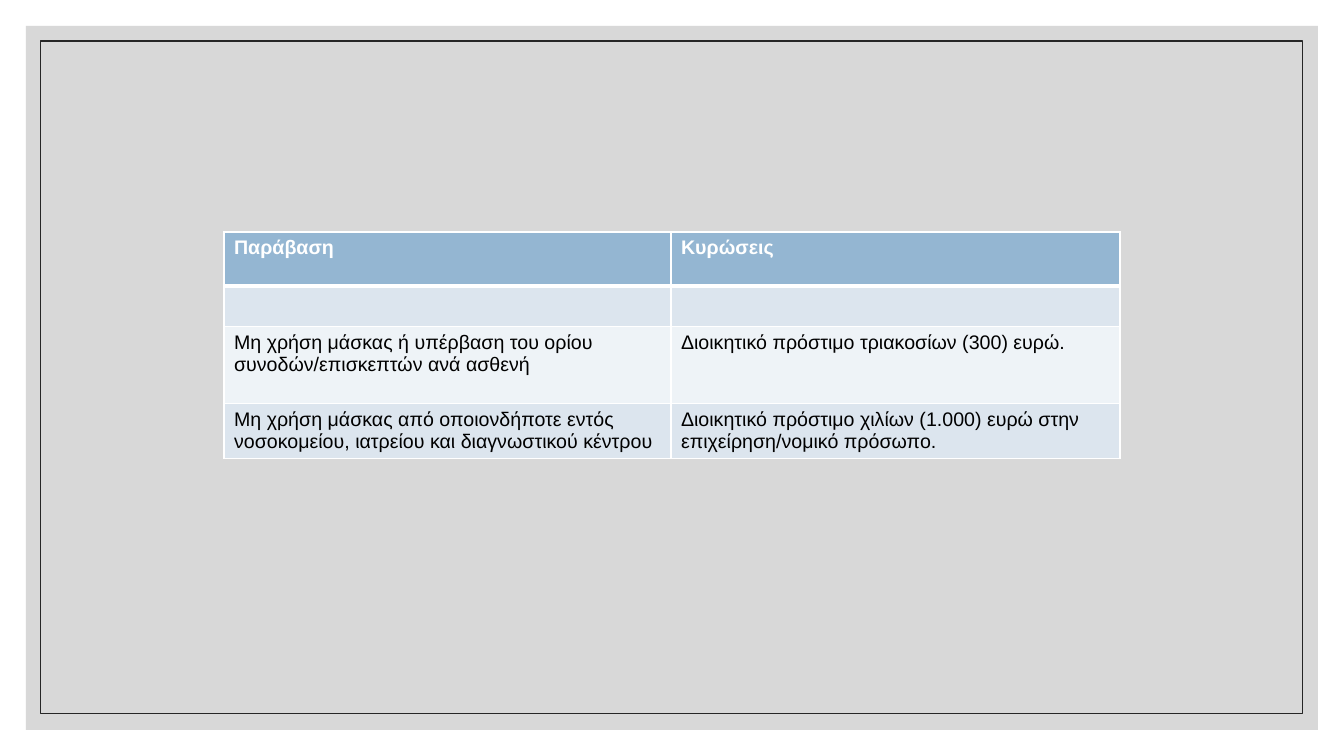
from dataclasses import dataclass

from lxml import etree
from pptx import Presentation
from pptx import util as u
from pptx.dml.color import RGBColor
from pptx.enum import shapes
from pptx.oxml import ns

SCALE = 914400 / 100.8
WHITE = "FFFFFF"
BLACK = "000000"
PALE = "DCE5EE"


@dataclass
class Frame:
    left: int
    top: int
    width: int
    height: int
    fill: str = ""
    alpha: int = 100
    line: str = ""


@dataclass
class Row:
    height: int
    fill: str
    texts: tuple[str, str]
    ink: str = BLACK
    bold: bool = False
    rule: int = 1


FRAMES = [
    Frame(26, 26, 1292, 704, fill="BFBFBF", alpha=60),
    Frame(41, 41, 1262, 673, line="262626"),
]
COLS = [447, 449]
ROWS = [
    Row(54, "94B6D2", ("Παράβαση", "Κυρώσεις"), WHITE, True, 3),
    Row(40, PALE, ("", "")),
    Row(77, "EEF3F7", (
        "Μη χρήση μάσκας ή υπέρβαση του ορίου συνοδών/επισκεπτών ανά ασθενή",
        "Διοικητικό πρόστιμο τριακοσίων (300) ευρώ.")),
    Row(55, PALE, (
        "Μη χρήση μάσκας από οποιονδήποτε εντός νοσοκομείου, ιατρείου "
        "και διαγνωστικού κέντρου",
        "Διοικητικό πρόστιμο χιλίων (1.000) ευρώ στην επιχείρηση/νομικό πρόσωπο.")),
]


def px(size: int) -> u.Emu:
    return u.Emu(round(size * SCALE))


def paint(fill, color: str) -> None:
    fill.solid()
    fill.fore_color.rgb = RGBColor.from_string(color)


def add_node(parent, tag: str, **attrs: str):
    return etree.SubElement(parent, ns.qn(tag), attrs)


def draw_frame(slide, frame: Frame) -> None:
    box = slide.shapes.add_shape(
        shapes.MSO_SHAPE.RECTANGLE, px(frame.left), px(frame.top),
        px(frame.width), px(frame.height))
    box.shadow.inherit = False
    if frame.fill:
        paint(box.fill, frame.fill)
        color = box.fill._xPr.find(".//" + ns.qn("a:srgbClr"))
        add_node(color, "a:alpha", val=str(frame.alpha * 1000))
    else:
        box.fill.background()
    if frame.line:
        paint(box.line.fill, frame.line)
        box.line.width = u.Pt(0.75)
    else:
        box.line.fill.background()


def set_edges(cell, above: int, below: int) -> None:
    """Draw white borders, with the top and bottom widths in points."""
    props = cell._tc.get_or_add_tcPr()
    for side, width in (("L", 1), ("R", 1), ("T", above), ("B", below)):
        edge = add_node(props, f"a:ln{side}", w=str(u.Pt(width)))
        add_node(add_node(edge, "a:solidFill"), "a:srgbClr", val=WHITE)


def fill_cell(cell, text: str, row: Row, above: int) -> None:
    set_edges(cell, above, row.rule)
    paint(cell.fill, row.fill)
    cell.text_frame.text = text
    for run in cell.text_frame.paragraphs[0].runs:
        run.font.name = "Arial"
        run.font.size = u.Pt(14)
        run.font.bold = row.bold
        run.font.color.rgb = RGBColor.from_string(row.ink)


def draw_table(slide, left: int, top: int) -> None:
    grid = slide.shapes.add_table(
        len(ROWS), len(COLS), px(left), px(top), px(sum(COLS)),
        px(sum(row.height for row in ROWS))).table
    for col, width in zip(grid.columns, COLS):
        col.width = px(width)
    above = 1
    for line, row in zip(grid.rows, ROWS):
        line.height = px(row.height)
        for cell, text in zip(line.cells, row.texts):
            fill_cell(cell, text, row, above)
        above = row.rule


def main() -> None:
    deck = Presentation()
    deck.slide_width, deck.slide_height = px(1344), px(756)
    slide = deck.slides.add_slide(deck.slide_layouts[6])
    paint(slide.background.fill, WHITE)
    for frame in FRAMES:
        draw_frame(slide, frame)
    draw_table(slide, 224, 232)
    deck.save("out.pptx")


if __name__ == "__main__":
    main()
